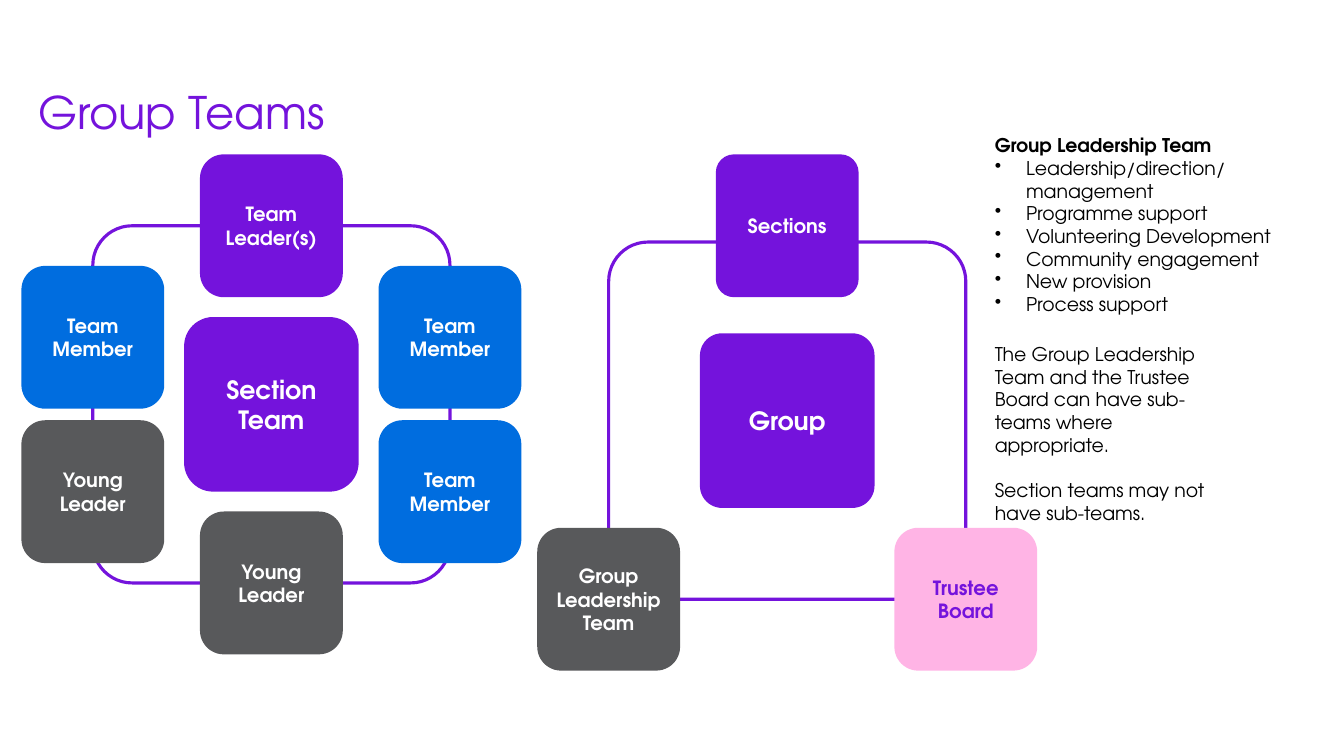
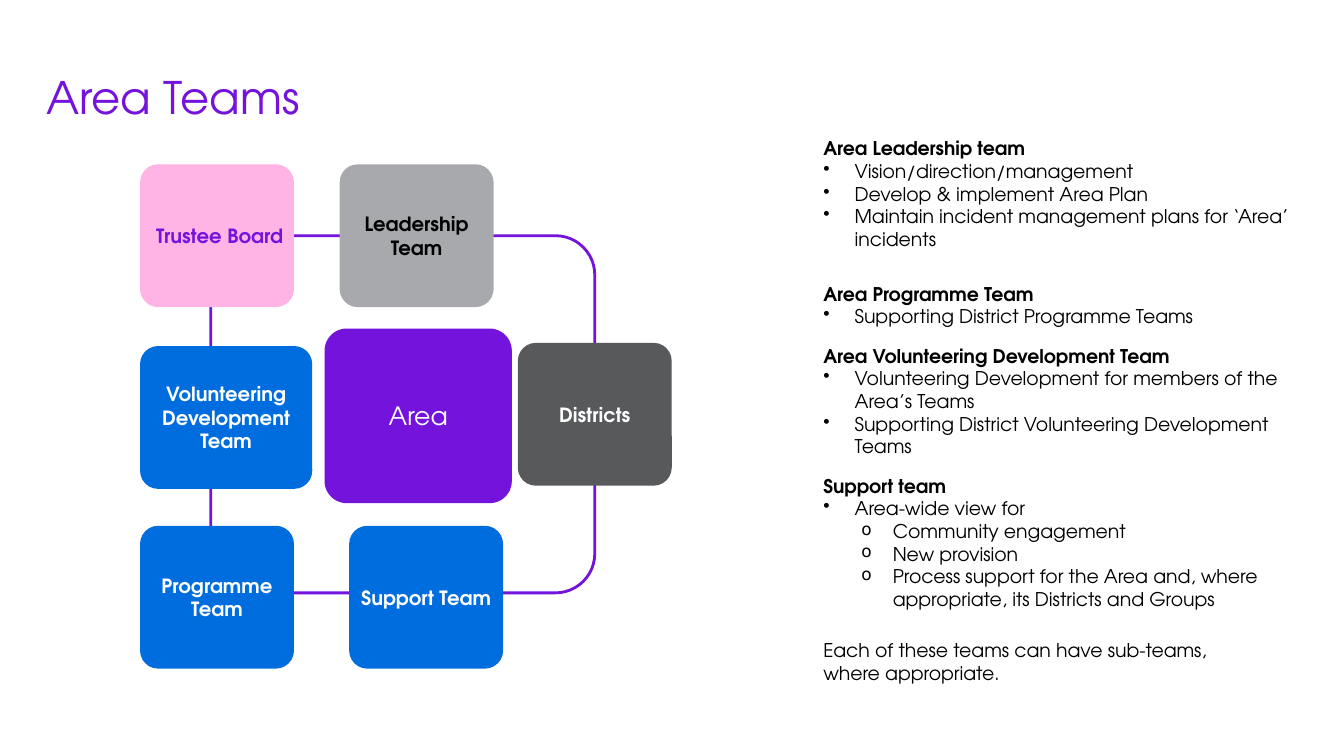
from dataclasses import dataclass

from lxml import etree
from pptx import Presentation
from pptx import util as u
from pptx.dml.color import RGBColor
from pptx.enum import shapes, text
from pptx.oxml import ns

FONT = "TeX Gyre Adventor"
COLORS = {
    "purple": "7413DC",
    "blue": "006DDF",
    "dark": "58595B",
    "grey": "A7A9AC",
    "pink": "FFB4E5",
    "white": "FFFFFF",
    "black": "000000",
}
TITLE_SIZE, BODY_SIZE, BOX_SIZE, HUB_SIZE = 32, 13.5, 14, 18
LINE_GAP = 16.2  # one line of body text, in points
BOX, HUB, RING = 3.6, 4.4, 9.0  # side lengths in cm
WIDE_BOX = 3.88
SOFT, TIGHT, RING_CORNER = 0.167, 0.127, 0.11  # corner ratios


@dataclass
class Ring:
    """Rounded outline that links the boxes; centre and size in cm."""
    x: float
    y: float
    width: float = RING
    weight: float = 2.25


@dataclass
class Box:
    """Rounded box placed by its centre, in cm."""
    label: str
    x: float
    y: float
    fill: str = "blue"
    color: str = "white"
    width: float = BOX
    height: float = BOX
    size: float = BOX_SIZE
    bold: bool = True
    corner: float = SOFT


@dataclass
class Line:
    """Body paragraph: level 0 is plain, 1 and 2 are bulleted."""
    words: str
    level: int = 0
    bold: bool = False
    before: float = 0


def color(name: str) -> RGBColor:
    return RGBColor.from_string(COLORS[name])


def add_run(paragraph, words: str, size: float, color_name: str, bold: bool = False) -> None:
    run = paragraph.add_run()
    run.text = words
    run.font.name = FONT
    run.font.size = u.Pt(size)
    run.font.bold = bold
    run.font.color.rgb = color(color_name)


def add_rounded(slide, x: float, y: float, width: float, height: float, corner: float):
    shape = slide.shapes.add_shape(
        shapes.MSO_SHAPE.ROUNDED_RECTANGLE,
        u.Cm(x - width / 2), u.Cm(y - height / 2), u.Cm(width), u.Cm(height))
    shape.adjustments[0] = corner
    shape.shadow.inherit = False
    return shape


def add_ring(slide, ring: Ring) -> None:
    shape = add_rounded(slide, ring.x, ring.y, ring.width, RING, RING_CORNER)
    shape.fill.background()
    shape.line.color.rgb = color("purple")
    shape.line.width = u.Pt(ring.weight)


def add_box(slide, box: Box) -> None:
    shape = add_rounded(slide, box.x, box.y, box.width, box.height, box.corner)
    shape.fill.solid()
    shape.fill.fore_color.rgb = color(box.fill)
    shape.line.fill.background()
    frame = shape.text_frame
    frame.word_wrap = True
    frame.vertical_anchor = text.MSO_ANCHOR.MIDDLE
    frame.margin_left = frame.margin_right = u.Cm(0.1)
    paragraph = frame.paragraphs[0]
    paragraph.alignment = text.PP_ALIGN.CENTER
    add_run(paragraph, box.label, box.size, box.color, box.bold)


def add_frame(slide, left: float, top: float, width: float, height: float):
    shape = slide.shapes.add_textbox(u.Cm(left), u.Cm(top), u.Cm(width), u.Cm(height))
    shape.text_frame.word_wrap = True
    return shape.text_frame


def add_title(slide, words: str, left: float, top: float) -> None:
    paragraph = add_frame(slide, left, top, 18, 1.62).paragraphs[0]
    paragraph._p.get_or_add_pPr().set("marL", str(u.Cm(0.18)))
    add_run(paragraph, words, TITLE_SIZE, "purple")


def add_bullet(paragraph, level: int) -> None:
    properties = paragraph._p.get_or_add_pPr()
    properties.set("marL", str(u.Cm(0.79 if level == 1 else 1.75)))
    properties.set("indent", str(-u.Cm(0.79)))
    if level == 2:
        etree.SubElement(properties, ns.qn("a:buSzPct")).set("val", "90000")
    mark = etree.SubElement(properties, ns.qn("a:buChar"))
    mark.set("char", "•" if level == 1 else "o")
    paragraph.level = level - 1


def add_body(slide, left: float, top: float, width: float, height: float,
             lines: list[Line]) -> None:
    frame = add_frame(slide, left, top, width, height)
    for index, line in enumerate(lines):
        paragraph = frame.add_paragraph() if index else frame.paragraphs[0]
        if line.level:
            add_bullet(paragraph, line.level)
        if line.before:
            paragraph.space_before = u.Pt(line.before)
        add_run(paragraph, line.words, BODY_SIZE, "black", line.bold)


def add_diagram(slide, ring: Ring, boxes: list[Box]) -> None:
    add_ring(slide, ring)
    for box in boxes:
        add_box(slide, box)


def build_group_teams(slide) -> None:
    add_title(slide, "Group Teams", 0.53, 2)

    # Section team diagram
    ring = Ring(6.84, 10.19)
    left, right = ring.x - RING / 2, ring.x + RING / 2
    top, bottom = ring.y - RING / 2, ring.y + RING / 2
    upper, lower = 8.5, 12.39
    add_diagram(slide, ring, [
        Box("Team Leader(s)", ring.x, top, "purple"),
        Box("Team Member", left, upper),
        Box("Team Member", right, upper),
        Box("Section Team", ring.x, ring.y, "purple", width=HUB, height=HUB, size=HUB_SIZE),
        Box("Young Leader", left, lower, "dark"),
        Box("Team Member", right, lower),
        Box("Young Leader", ring.x, bottom, "dark"),
    ])

    # Group diagram
    ring = Ring(19.84, 10.6)
    bottom = ring.y + RING / 2
    add_diagram(slide, ring, [
        Box("Sections", ring.x, top, "purple", corner=TIGHT),
        Box("Group", ring.x, ring.y, "purple", width=HUB, height=HUB, size=HUB_SIZE,
            corner=TIGHT),
        Box("Group Leadership Team", ring.x - RING / 2, bottom, "dark"),
        Box("Trustee Board", ring.x + RING / 2, bottom, "pink", "purple"),
    ])

    # Explanation
    add_body(slide, 24.82, 3.25, 8.66, 4.3, [
        Line("Group Leadership Team", bold=True),
        Line("Leadership/direction/management", 1),
        Line("Programme support", 1),
        Line("Volunteering Development", 1),
        Line("Community engagement", 1),
        Line("New provision", 1),
        Line("Process support", 1),
    ])
    add_body(slide, 24.82, 8.51, 6.3, 4.3, [
        Line("The Group Leadership Team and the Trustee Board can have sub-teams "
             "where appropriate."),
        Line("Section teams may not have sub-teams.", before=LINE_GAP),
    ])


def build_area_teams(slide) -> None:
    add_title(slide, "Area Teams", 0.74, 1.62)

    # Area diagram
    ring = Ring(10.15, 10.44, 9.68, 2)
    top, bottom = ring.y - RING / 2, 15.05
    left, middle, right = 5.47, 10.5, ring.x + ring.width / 2
    wide = {"width": WIDE_BOX, "corner": TIGHT}
    add_diagram(slide, ring, [
        Box("Leadership Team", middle, top, "grey", "black", **wide),
        Box("\N{NO-BREAK SPACE}Trustee Board", left, top, "pink", "purple", **wide),
        Box("Area", middle + 0.04, 10.48, "purple", width=4.72, height=HUB,
            size=HUB_SIZE, bold=False, corner=TIGHT),
        Box("Volunteering Development Team", 5.7, 10.52, width=4.34, corner=TIGHT),
        Box("Districts", right, ring.y, "dark", **wide),
        Box("Programme Team", left, bottom, **wide),
        Box("Support Team", 10.74, bottom, **wide),
    ])

    # Explanation
    add_body(slide, 20.5, 3.33, 12.37, 12.65, [
        Line("Area Leadership team", bold=True),
        Line("Vision/direction/management", 1),
        Line("Develop & implement Area Plan", 1),
        Line("Maintain incident management plans for ‘Area’ incidents", 1),
        Line("Area Programme Team", bold=True, before=LINE_GAP + 6.5),
        Line("Supporting District Programme Teams", 1),
        Line("Area Volunteering Development Team", bold=True, before=12),
        Line("Volunteering Development for members of the Area’s Teams", 1),
        Line("Supporting District Volunteering Development Teams", 1),
        Line("Support team", bold=True, before=12),
        Line("Area-wide view for", 1),
        Line("Community engagement", 2),
        Line("New provision", 2),
        Line("Process support for the Area and, where appropriate, "
             "its Districts and Groups", 2),
    ])
    add_body(slide, 20.5, 15.98, 10.77, 1.42, [
        Line("Each of these teams can have sub-teams, where appropriate."),
    ])


def main() -> None:
    presentation = Presentation()
    presentation.slide_width = u.Cm(33.87)
    presentation.slide_height = u.Cm(19.05)
    blank = presentation.slide_layouts[6]
    for build in (build_group_teams, build_area_teams):
        build(presentation.slides.add_slide(blank))
    presentation.save("out.pptx")


if __name__ == "__main__":
    main()
